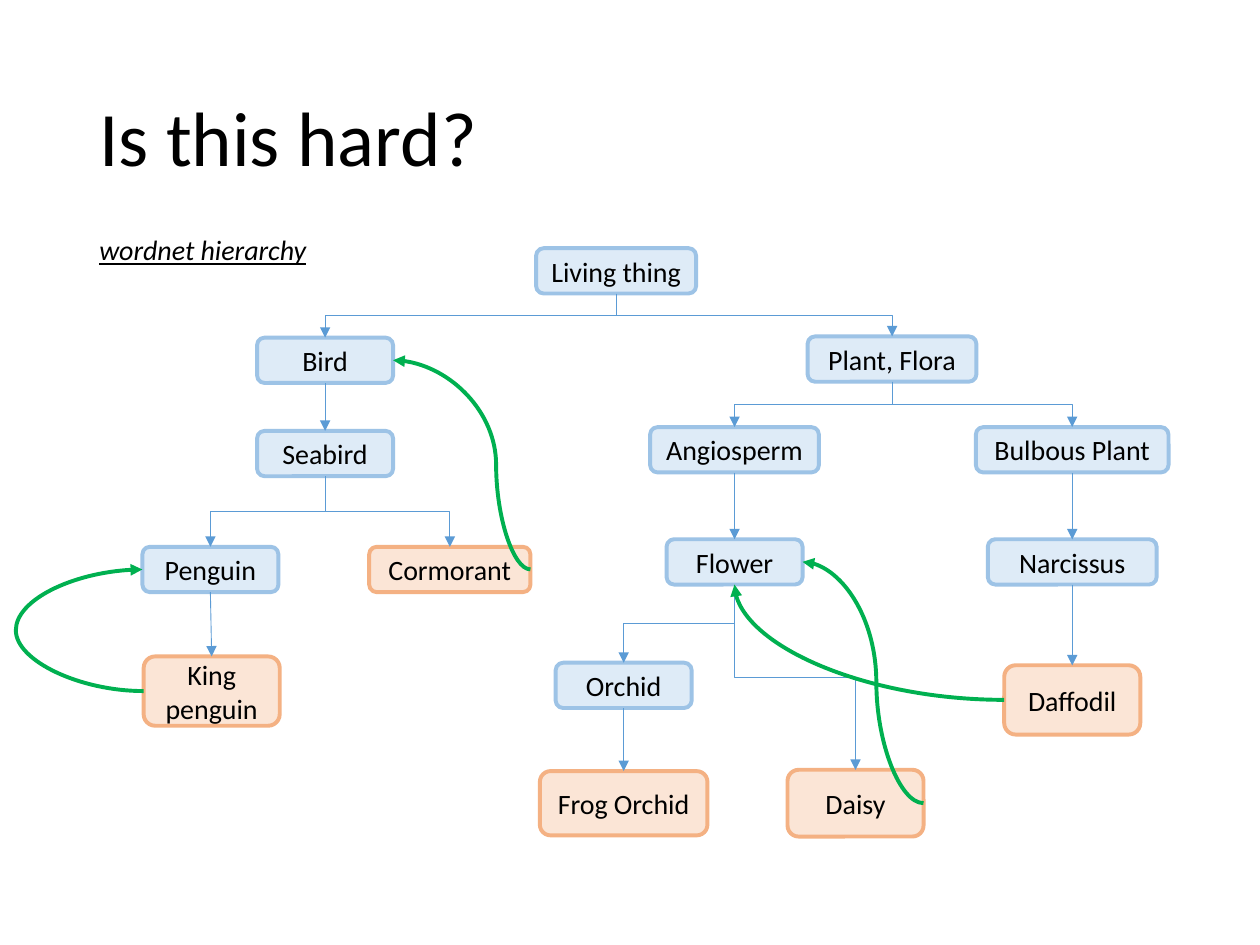
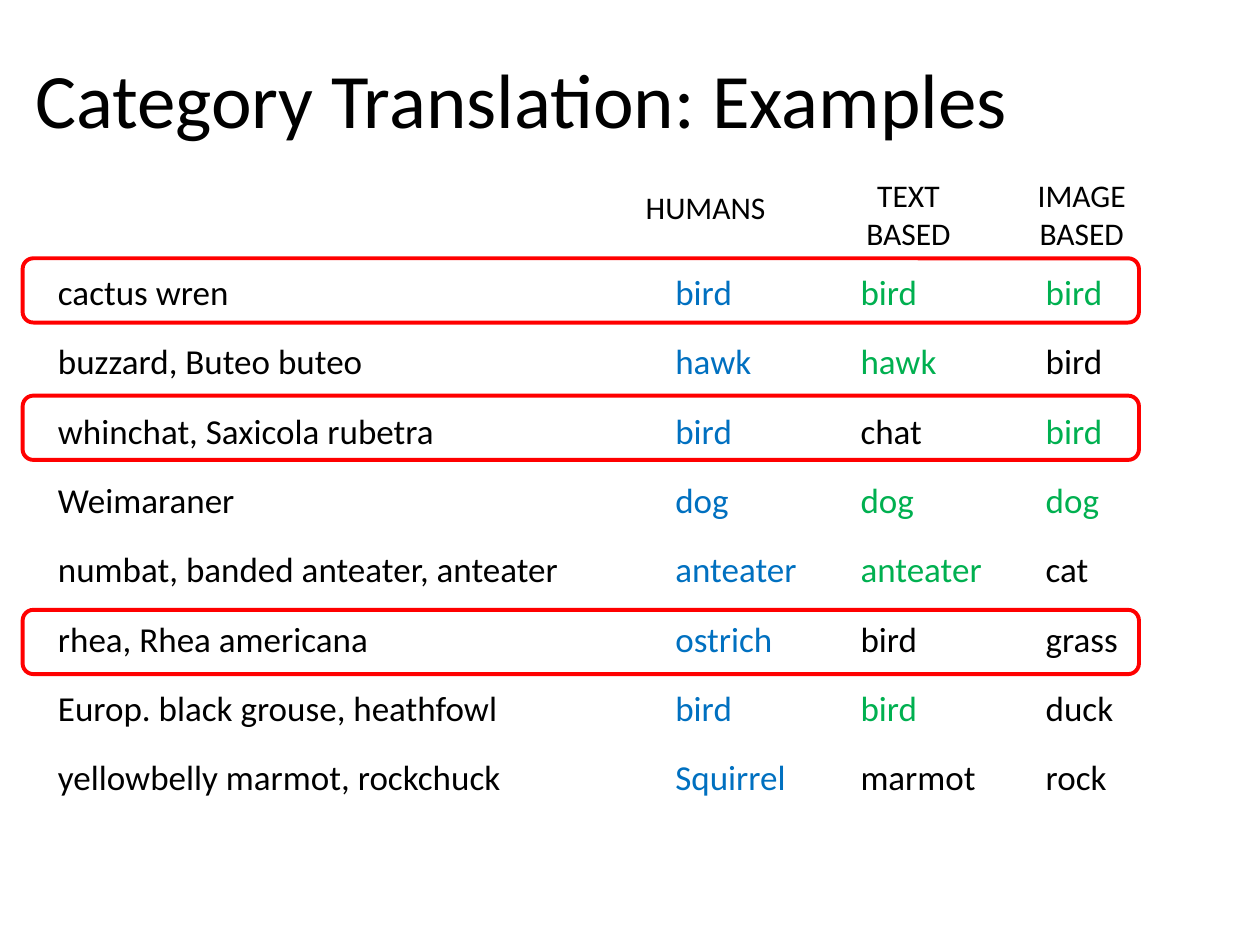
"""Build two slides: a word hierarchy and a table of category translations."""
import pptx
import pptx.dml.color
import pptx.enum.shapes
import pptx.enum.text
import pptx.oxml
import pptx.oxml.ns
import pptx.util

Inches = pptx.util.Inches
Pt = pptx.util.Pt
qn = pptx.oxml.ns.qn
ALIGN = pptx.enum.text.PP_ALIGN
ANCHOR = pptx.enum.text.MSO_ANCHOR
CONNECTOR = pptx.enum.shapes.MSO_CONNECTOR
ROUNDED = pptx.enum.shapes.MSO_SHAPE.ROUNDED_RECTANGLE

FONT = "Calibri"
COLORS = {
    "text": "000000",
    "class_fill": "DEEBF7",
    "class_line": "9DC3E6",
    "leaf_fill": "FBE5D6",
    "leaf_line": "F4B183",
    "tree": "5B9BD5",
    "jump": "00B050",
    "human": "0070C0",
    "match": "00B050",
    "highlight": "FF0000",
}
TOP, LEFT, BOTTOM, RIGHT = range(4)

# name: (centre x, top, width, height, kind)
NODES = {
    "Living thing": (4.89, 1.97, 1.27, 0.36, "class"),
    "Bird": (2.58, 2.68, 1.08, 0.36, "class"),
    "Seabird": (2.58, 3.42, 1.08, 0.36, "class"),
    "Penguin": (1.67, 4.34, 1.08, 0.36, "class"),
    "Plant, Flora": (7.08, 2.67, 1.34, 0.36, "class"),
    "Angiosperm": (5.83, 3.39, 1.34, 0.36, "class"),
    "Bulbous Plant": (8.51, 3.39, 1.53, 0.36, "class"),
    "Flower": (5.83, 4.28, 1.08, 0.36, "class"),
    "Narcissus": (8.51, 4.28, 1.34, 0.36, "class"),
    "Orchid": (4.95, 5.26, 1.08, 0.36, "class"),
    "Cormorant": (3.57, 4.34, 1.28, 0.36, "leaf"),
    "King penguin": (1.68, 5.21, 1.08, 0.55, "leaf"),
    "Frog Orchid": (4.95, 6.12, 1.33, 0.51, "leaf"),
    "Daisy": (6.79, 6.11, 1.08, 0.53, "leaf"),
    "Daffodil": (8.51, 5.28, 1.08, 0.55, "leaf"),
}
CHILDREN = {
    "Living thing": ["Bird", "Plant, Flora"],
    "Bird": ["Seabird"],
    "Seabird": ["Penguin", "Cormorant"],
    "Penguin": ["King penguin"],
    "Plant, Flora": ["Angiosperm", "Bulbous Plant"],
    "Angiosperm": ["Flower"],
    "Bulbous Plant": ["Narcissus"],
    "Flower": ["Orchid", "Daisy"],
    "Narcissus": ["Daffodil"],
    "Orchid": ["Frog Orchid"],
}
# leaf, its side, target, its side, bend (None for a single turn)
JUMPS = [
    ("Cormorant", RIGHT, "Bird", RIGHT, 0.25),
    ("King penguin", LEFT, "Penguin", LEFT, 103),
    ("Daisy", RIGHT, "Flower", RIGHT, 0.39),
    ("Daffodil", LEFT, "Flower", BOTTOM, None),
]
HEADERS = [
    ("HUMANS", 5.02, 1.44, 1.16, 0.4),
    ("TEXT\nBASED", 6.77, 1.35, 0.88, 0.71),
    ("IMAGE\nBASED", 8.13, 1.35, 0.91, 0.71),
]
EXAMPLES = [
    ("cactus wren", "bird", "bird", "bird"),
    ("buzzard, Buteo buteo", "hawk", "hawk", "bird"),
    ("whinchat, Saxicola rubetra", "bird", "chat", "bird"),
    ("Weimaraner", "dog", "dog", "dog"),
    ("numbat, banded anteater, anteater", "anteater", "anteater", "cat"),
    ("rhea, Rhea americana", "ostrich", "bird", "grass"),
    ("Europ. black grouse, heathfowl", "bird", "bird", "duck"),
    ("yellowbelly marmot, rockchuck", "Squirrel", "marmot", "rock"),
]
COLUMN_WIDTHS = [4.9, 1.47, 1.47, 1.47]
ROW_HEIGHT = 0.55
HIGHLIGHT_TOPS = [2.05, 3.14, 4.84]


def rgb(name):
    """Return the named colour."""
    return pptx.dml.color.RGBColor.from_string(COLORS[name])


def element(tag, attributes=""):
    """Return an empty drawing element."""
    return pptx.oxml.parse_xml(f'<a:{tag} {pptx.oxml.ns.nsdecls("a")} {attributes}/>')


def write(tf, text, size, color="text", align=ALIGN.LEFT):
    """Fill a text frame with evenly formatted paragraphs."""
    tf.text = text
    for p in tf.paragraphs:
        p.alignment = align
        p.font.name = FONT
        p.font.size = Pt(size)
        p.font.color.rgb = rgb(color)


def add_text(s, text, x, y, w, h, size, align=ALIGN.LEFT, wrap=False):
    """Add a text box and return its text frame."""
    tf = s.shapes.add_textbox(Inches(x), Inches(y), Inches(w), Inches(h)).text_frame
    tf.word_wrap = wrap
    write(tf, text, size, align=align)
    return tf


def add_title(s, text, x, y, w):
    """Add the large title, centred vertically in its box."""
    tf = add_text(s, text, x, y, w, 1.45, 44, wrap=True)
    tf.vertical_anchor = ANCHOR.MIDDLE
    tf.paragraphs[0].line_spacing = 0.9


def add_box(s, x, y, w, h, line, fill=None):
    """Add a rounded box, hollow unless a fill is named."""
    sp = s.shapes.add_shape(ROUNDED, Inches(x), Inches(y), Inches(w), Inches(h))
    sp.shadow.inherit = False
    sp.line.color.rgb = rgb(line)
    sp.line.width = Pt(2.25)
    if fill:
        sp.fill.solid()
        sp.fill.fore_color.rgb = rgb(fill)
    else:
        sp.fill.background()
    return sp


def add_node(s, name, center, y, w, h, kind):
    """Add one labelled node of the hierarchy."""
    sp = add_box(s, center - w / 2, y, w, h, kind + "_line", kind + "_fill")
    sp.text_frame.word_wrap = True
    sp.text_frame.vertical_anchor = ANCHOR.MIDDLE
    write(sp.text_frame, name, 16, align=ALIGN.CENTER)
    return sp


def add_arrow(s, kind, start, start_side, end, end_side, color, width):
    """Add an arrow glued to the sides of two shapes."""
    c = s.shapes.add_connector(kind, 0, 0, 0, 0)
    c.begin_connect(start, start_side)
    c.end_connect(end, end_side)
    c.line.color.rgb = rgb(color)
    c.line.width = Pt(width)
    properties = c._element.spPr
    properties.find(qn("a:ln")).append(element("tailEnd", 'type="triangle"'))
    properties.append(element("effectLst"))
    return c


def add_branch(s, parent, child):
    """Join a parent to a child below it, turning halfway down."""
    offset = child.left + child.width // 2 - parent.left - parent.width // 2
    straight = abs(offset) < Inches(0.02)
    kind = CONNECTOR.STRAIGHT if straight else CONNECTOR.ELBOW
    c = add_arrow(s, kind, parent, BOTTOM, child, TOP, "tree", 0.5)
    if straight:
        return
    dx, dy = c.end_x - c.begin_x, c.end_y - c.begin_y
    mid_x, mid_y = (c.begin_x + c.end_x) // 2, (c.begin_y + c.end_y) // 2
    c.left, c.top = mid_x - dy // 2, mid_y - abs(dx) // 2
    c.width, c.height = dy, abs(dx)
    xfrm = c._element.spPr.find(qn("a:xfrm"))
    xfrm.set("rot", str((270 if dx > 0 else 90) * 60000))
    xfrm.set("flipH", "1" if dx > 0 else "0")
    xfrm.set("flipV", "0")


def add_jump(s, leaf, leaf_side, target, target_side, bend):
    """Add a curved arrow from a leaf to its everyday category."""
    c = add_arrow(s, CONNECTOR.CURVE, leaf, leaf_side, target, target_side, "jump", 2.25)
    geom = c._element.spPr.find(qn("a:prstGeom"))
    if bend is None:
        geom.set("prst", "curvedConnector2")
    else:
        guide = element("gd", f'name="adj1" fmla="val {round(bend * 100000)}"')
        geom.find(qn("a:avLst")).append(guide)


def add_examples(s, x, y):
    """Add the table; guesses that agree with humans are green."""
    frame = s.shapes.add_table(
        len(EXAMPLES), len(COLUMN_WIDTHS), Inches(x), Inches(y),
        Inches(sum(COLUMN_WIDTHS)), Inches(ROW_HEIGHT * len(EXAMPLES)))
    table = frame.table
    table.first_row = table.horz_banding = False
    for column, width in zip(table.columns, COLUMN_WIDTHS):
        column.width = Inches(width)
    for i, example in enumerate(EXAMPLES):
        table.rows[i].height = Inches(ROW_HEIGHT)
        human = example[1]
        guesses = ["match" if guess == human else "text" for guess in example[2:]]
        for j, color in enumerate(["text", "human"] + guesses):
            cell = table.cell(i, j)
            cell.fill.background()
            cell.margin_left = cell.margin_right = Inches(0.09)
            cell.margin_top = cell.margin_bottom = Inches(0.04)
            write(cell.text_frame, example[j], 20, color)


def build_hierarchy(s):
    """Draw the hierarchy slide."""
    add_title(s, "Is this hard?", 0.69, 0.4, 8.62)
    tf = add_text(s, "wordnet hierarchy", 0.69, 1.8, 1.87, 0.37, 16)
    tf.paragraphs[0].font.italic = True
    tf.paragraphs[0].font.underline = True
    nodes = {name: add_node(s, name, *place) for name, place in NODES.items()}
    for parent, children in CHILDREN.items():
        for child in children:
            add_branch(s, nodes[parent], nodes[child])
    for leaf, leaf_side, target, target_side, bend in JUMPS:
        add_jump(s, nodes[leaf], leaf_side, nodes[target], target_side, bend)


def build_translations(s):
    """Draw the translation examples slide."""
    add_examples(s, 0.37, 2.12)
    for text, x, y, w, h in HEADERS:
        add_text(s, text, x, y, w, h, 18, ALIGN.CENTER)
    add_title(s, "Category Translation: Examples", 0.18, 0.1, 9.88)
    for top in HIGHLIGHT_TOPS:
        add_box(s, 0.18, top, 8.86, 0.51, "highlight")


def main():
    """Build and save the presentation."""
    prs = pptx.Presentation()
    prs.slide_width, prs.slide_height = Inches(10), Inches(7.5)
    for build in (build_hierarchy, build_translations):
        build(prs.slides.add_slide(prs.slide_layouts[6]))
    prs.save("out.pptx")


if __name__ == "__main__":
    main()
